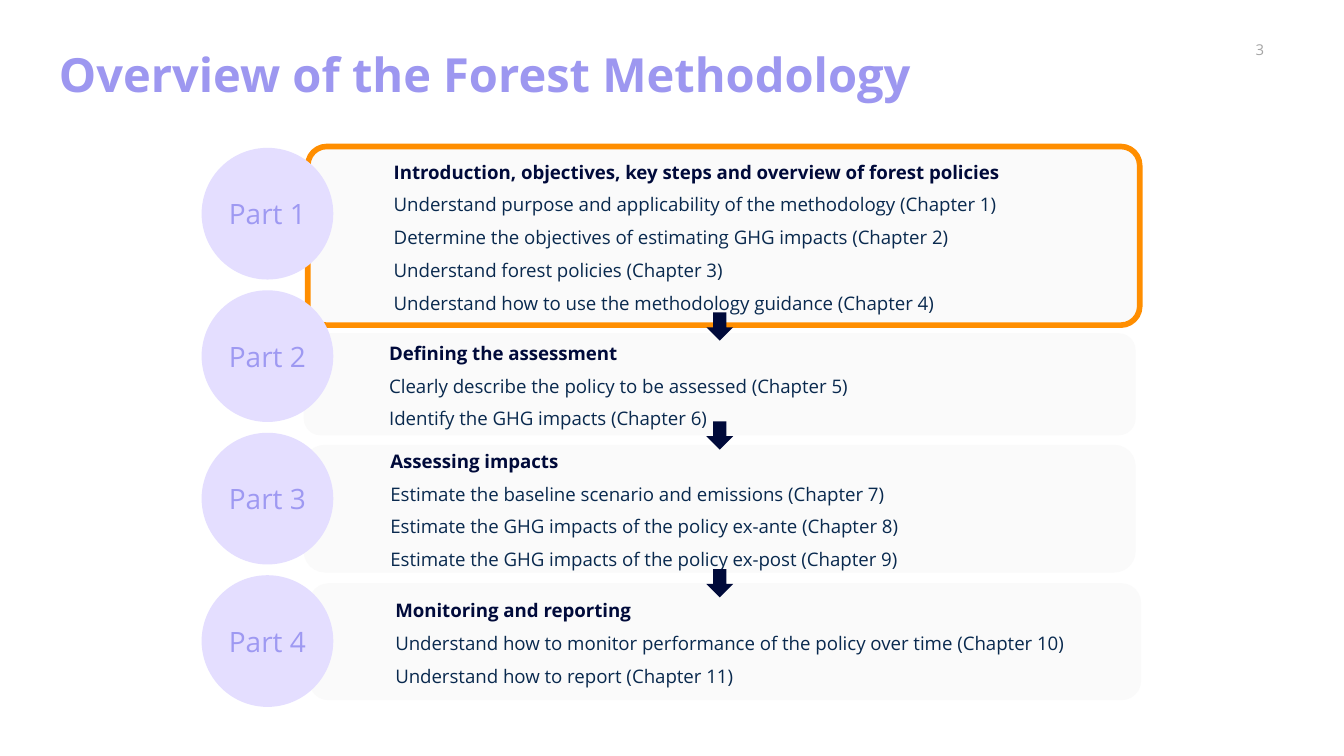
from pptx import Presentation
from pptx.dml.color import RGBColor
from pptx.enum.shapes import MSO_SHAPE as SHAPE
from pptx.enum.text import MSO_ANCHOR as ANCHOR, PP_ALIGN as ALIGN
from pptx.util import Inches, Pt

FONT = "Open Sans"
COLORS = {
    "title": "9D97F0", "number": "A5A5A5", "panel": "FAFAFA",
    "highlight": "FF8E00", "heading": "000A3A", "body": "09294E",
    "circle": "E4DEFF", "label": "9E99F2",
}

# Left, top, height, corner radius ratio, heading and steps of each part
PARTS = [
    (2.29, 1.09, 1.33, 0.106,
     "Introduction, objectives, key steps and overview of forest policies",
     ["Understand purpose and applicability of the methodology (Chapter 1)",
      "Determine the objectives of estimating GHG impacts (Chapter 2)",
      "Understand forest policies (Chapter 3)",
      "Understand how to use the methodology guidance (Chapter 4)"]),
    (2.26, 2.48, 0.76, 0.167, "Defining the assessment",
     ["Clearly describe the policy to be assessed (Chapter 5)",
      "Identify the GHG impacts (Chapter 6)"]),
    (2.26, 3.31, 0.95, 0.167, "Assessing impacts",
     ["Estimate the baseline scenario and emissions (Chapter 7)",
      "Estimate the GHG impacts of the policy ex-ante (Chapter 8)",
      "Estimate the GHG impacts of the policy ex-post (Chapter 9)"]),
    (2.3, 4.34, 0.87, 0.167, "Monitoring and reporting",
     ["Understand how to monitor performance of the policy over time (Chapter 10)",
      "Understand how to report (Chapter 11)"]),
]
PANEL_WIDTH = 6.19
ARROW_TOPS = [2.33, 3.14, 4.24]
CIRCLE_TOP, CIRCLE_STEP, CIRCLE_SIZE = 1.1, 1.06, 0.98


def rgb(name):
    return RGBColor.from_string(COLORS[name])


def add_text(p, text, *, size, color, bold=False, align=ALIGN.LEFT,
             indent=0, spacing=None, before=0):
    if indent:
        pPr = p._p.get_or_add_pPr()
        pPr.set("marL", str(Inches(indent)))
        pPr.set("indent", "0")
    p.alignment = align
    if spacing:
        p.line_spacing = spacing
    p.space_before = Pt(before)
    r = p.add_run()
    r.text = text
    r.font.name = FONT
    r.font.size = Pt(size)
    r.font.bold = bold
    r.font.color.rgb = rgb(color)


class Deck:
    def __init__(self, prs):
        self.slide = prs.slides.add_slide(prs.slide_layouts[6])

    def frame(self, sp, inset_x, inset_y, anchor):
        tf = sp.text_frame
        tf.word_wrap = True
        tf.vertical_anchor = anchor
        tf.margin_left = tf.margin_right = Inches(inset_x)
        tf.margin_top = tf.margin_bottom = Inches(inset_y)
        return tf

    def text(self, x, y, w, h, text, inset=0, anchor=ANCHOR.TOP, **style):
        sp = self.slide.shapes.add_textbox(*map(Inches, (x, y, w, h)))
        tf = self.frame(sp, inset, inset, anchor)
        add_text(tf.paragraphs[0], text, **style)

    def shape(self, kind, x, y, w, h, fill, line=None):
        sp = self.slide.shapes.add_shape(kind, *map(Inches, (x, y, w, h)))
        sp.shadow.inherit = False
        sp.fill.solid()
        sp.fill.fore_color.rgb = rgb(fill)
        if line:
            sp.line.color.rgb = rgb(line)
            sp.line.width = Pt(3)
        else:
            sp.line.fill.background()
        return sp

    def panel(self, x, y, h, radius, heading, steps, line=None):
        sp = self.shape(SHAPE.ROUNDED_RECTANGLE, x, y, PANEL_WIDTH, h, "panel", line)
        sp.adjustments[0] = radius
        tf = self.frame(sp, 0.1, 0.05, ANCHOR.MIDDLE)
        style = dict(size=10, indent=0.5, spacing=1.13)
        add_text(tf.paragraphs[0], heading, color="heading", bold=True, **style)
        for step in steps:
            add_text(tf.add_paragraph(), step, color="body", before=4, **style)

    def arrow(self, y):
        sp = self.shape(SHAPE.RIGHT_ARROW, 5.25, y, 0.21, 0.2, "heading")
        sp.rotation = 90

    def circle(self, y, label):
        sp = self.shape(SHAPE.OVAL, 1.5, y, CIRCLE_SIZE, CIRCLE_SIZE, "circle")
        tf = self.frame(sp, 0, 0, ANCHOR.MIDDLE)
        add_text(tf.paragraphs[0], label, size=15, color="label", align=ALIGN.CENTER)


def main():
    # Widescreen page, 16:9
    prs = Presentation()
    prs.slide_width = Inches(10)
    prs.slide_height = Inches(10 * 9 / 16)
    deck = Deck(prs)

    # Page number and title
    deck.text(8.98, 0.26, 0.79, 0.22, "3", anchor=ANCHOR.MIDDLE,
              size=8, color="number", align=ALIGN.CENTER)
    deck.text(0.34, 0.24, 9.32, 0.63, "Overview of the Forest Methodology",
              inset=0.1, size=25.2, color="title", bold=True)

    # Panels, the first one highlighted
    for i, part in enumerate(PARTS):
        deck.panel(*part, line="highlight" if i == 0 else None)

    # Arrows between the panels
    for top in ARROW_TOPS:
        deck.arrow(top)

    # Part labels
    for i in range(len(PARTS)):
        deck.circle(CIRCLE_TOP + i * CIRCLE_STEP, f"Part {i + 1}")

    prs.save("out.pptx")


if __name__ == "__main__":
    main()
